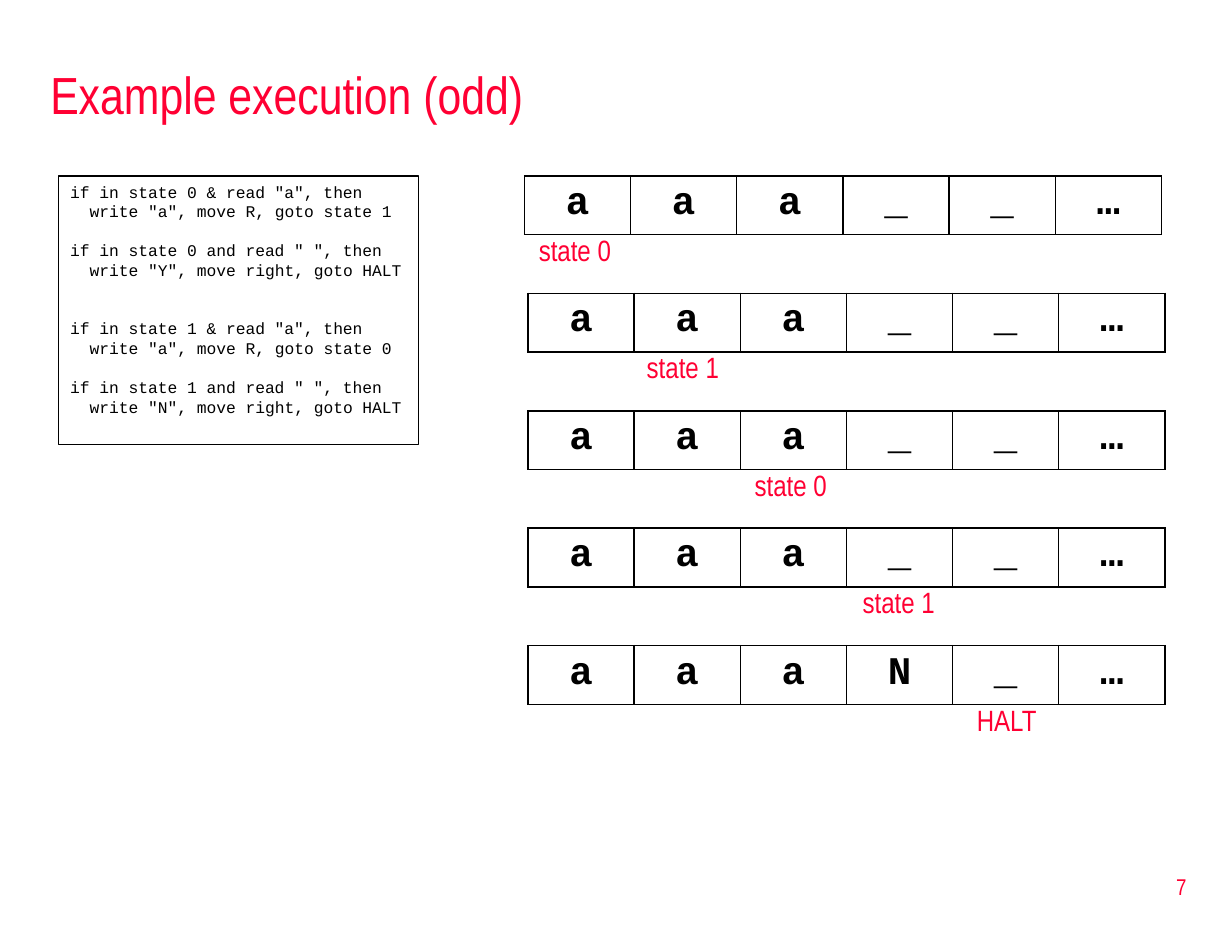
import pptx
import pptx.util
import pptx.dml.color
import pptx.enum.text
import pptx.oxml
import pptx.oxml.ns
import lxml.etree

Inches = pptx.util.Inches
Pt = pptx.util.Pt
ALIGN = pptx.enum.text.PP_ALIGN
ANCHOR = pptx.enum.text.MSO_ANCHOR
RED = "FF0033"
BLACK = "000000"


def color(value):
    return pptx.dml.color.RGBColor.from_string(value)


def write(p, text, size, font, value, align=ALIGN.LEFT, bold=False):
    p.text = text
    p.alignment = align
    r = p.runs[0]
    r.font.size = Pt(size)
    r.font.name = font
    r.font.bold = bold
    r.font.color.rgb = color(value)


prs = pptx.Presentation()
prs.slide_width = Inches(10.5)
prs.slide_height = Inches(8)
s = prs.slides.add_slide(prs.slide_layouts[6])

labels = [
    ("Example execution (odd)", 0.33, 0.42, 9.92, 0.75, 32, ALIGN.LEFT, ANCHOR.MIDDLE),
    ("7", 8.02, 7.29, 2.19, 0.53, 14, ALIGN.RIGHT, ANCHOR.MIDDLE),
]
for i, state in enumerate(["state 0", "state 1", "state 0", "state 1", "HALT"]):
    labels.append((state, 4.47 + 0.92 * i, 1.93 + i, 0.86, 0.4, 18, ALIGN.CENTER, ANCHOR.TOP))

for text, x, y, w, h, size, align, anchor in labels:
    sp = s.shapes.add_textbox(Inches(x), Inches(y), Inches(w), Inches(h))
    tf = sp.text_frame
    tf.word_wrap = True
    tf.vertical_anchor = anchor
    write(tf.paragraphs[0], text, size, "Arial Narrow", RED, align)

rules = [
    ('if in state 0 & read "a", then', 'write "a", move R, goto state 1', 0),
    ('if in state 0 and read " ", then', 'write "Y", move right, goto HALT', 12),
    ('if in state 1 & read "a", then', 'write "a", move R, goto state 0', 24),
    ('if in state 1 and read " ", then', 'write "N", move right, goto HALT', 12),
]
sp = s.shapes.add_textbox(Inches(0.5), Inches(1.5), Inches(3.07), Inches(2.29))
sp.line.color.rgb = color(BLACK)
sp.line.width = Pt(0.75)
tf = sp.text_frame
tf.word_wrap = True
for i, (condition, action, gap) in enumerate(rules):
    p = tf.add_paragraph() if i else tf.paragraphs[0]
    write(p, condition, 10, "Courier New", BLACK)
    p.line_spacing = Pt(12)
    p.space_before = Pt(gap)
    p = tf.add_paragraph()
    write(p, action, 10, "Courier New", BLACK)
    p.line_spacing = Pt(12)
    p._p.get_or_add_pPr().set("marL", str(Pt(12)))

tapes = ["aaa__…"] * 4 + ["aaaN_…"]
for i, tape in enumerate(tapes):
    x = 4.5 if i else 4.47
    frame = s.shapes.add_table(1, len(tape), Inches(x), Inches(1.5 + i), Inches(5.43), Inches(0.42))
    table = frame.table
    table.first_row = False
    table.horz_banding = False
    for cell, symbol in zip(table.iter_cells(), tape):
        write(cell.text_frame.paragraphs[0], symbol, 24, "Courier New", BLACK, ALIGN.CENTER, True)
        tcPr = cell._tc.get_or_add_tcPr()
        for side in ("lnL", "lnR", "lnT", "lnB"):
            ln = lxml.etree.SubElement(tcPr, pptx.oxml.ns.qn("a:" + side), w=str(Pt(1)))
            fill = lxml.etree.SubElement(ln, pptx.oxml.ns.qn("a:solidFill"))
            lxml.etree.SubElement(fill, pptx.oxml.ns.qn("a:srgbClr"), val=BLACK)
        cell.fill.background()

prs.save("out.pptx")
